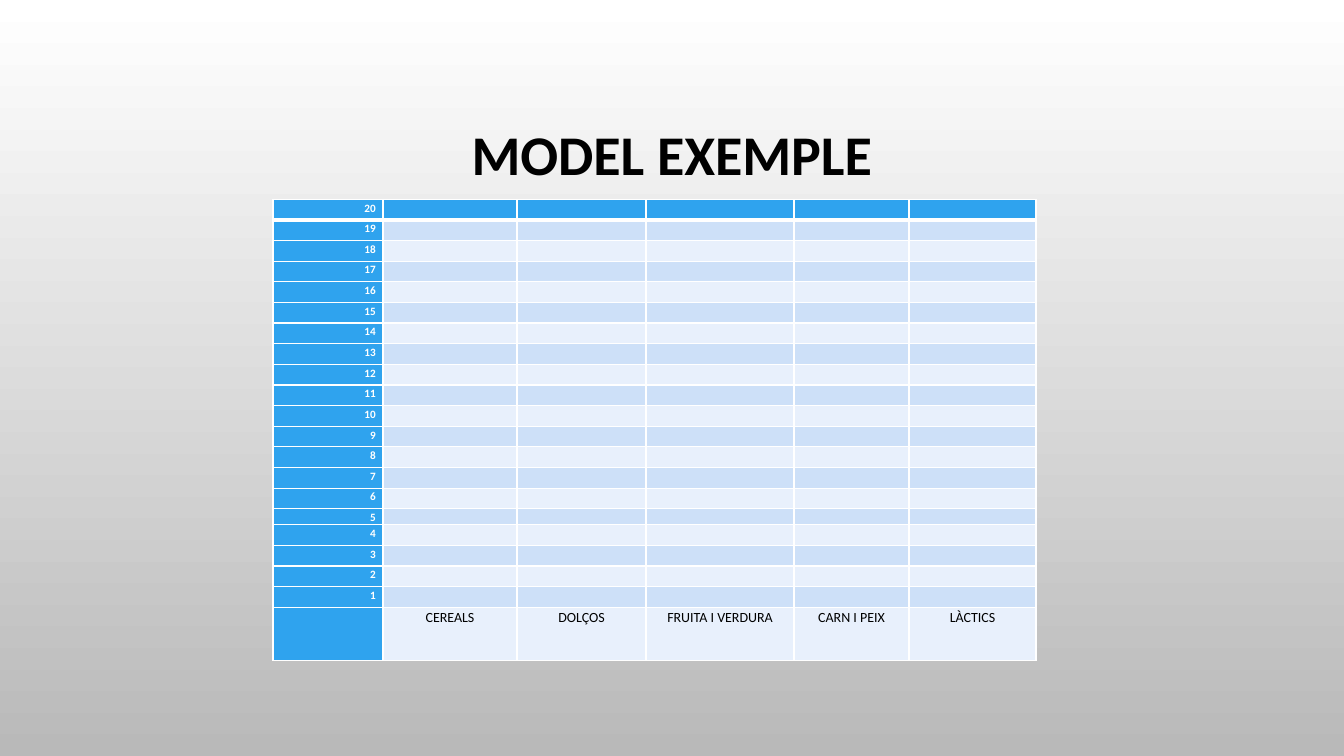
from lxml import etree
from pptx import Presentation
from pptx import util as u
from pptx.dml.color import RGBColor
from pptx.enum import text
from pptx.oxml.ns import qn

# Content
TITLE = "MODEL EXEMPLE"
FOODS = ["CEREALS", "DOLÇOS", "FRUITA I VERDURA", "CARN I PEIX", "LÀCTICS"]
TOP_COUNT = 20
rows = [[str(n)] + [""] * len(FOODS) for n in range(TOP_COUNT, 0, -1)]
rows.append([""] + FOODS)

# Measures in centimetres, and colours
COL_WIDTHS = [2.77, 3.38, 3.25, 3.73, 2.9, 3.2]
ROW_HEIGHT, LOW_ROW_HEIGHT, FOOD_ROW_HEIGHT = 0.52, 0.39, 1.35
BLUE, BAND_DARK, BAND_LIGHT = "2FA3EE", "CDE0F8", "E8F0FC"
WHITE, BLACK, GREY = "FFFFFF", "000000", "B9B9B9"


def rgb(value):
    return RGBColor.from_string(value)


def add_run(p, words, size, color, bold):
    r = p.add_run()
    r.text = words
    r.font.name, r.font.size, r.font.bold = "Calibri", u.Pt(size), bold
    r.font.color.rgb = rgb(color)


def add_borders(cell, top, bottom):
    tc_pr = cell._tc.get_or_add_tcPr()
    for side, width in (("L", 1), ("R", 1), ("T", top), ("B", bottom)):
        ln = etree.SubElement(tc_pr, qn("a:ln" + side), w=str(u.Pt(width)))
        fill = etree.SubElement(ln, qn("a:solidFill"))
        etree.SubElement(fill, qn("a:srgbClr"), val=WHITE)


def row_height(i):
    if i == len(rows) - 1:
        return FOOD_ROW_HEIGHT
    return LOW_ROW_HEIGHT if rows[i][0] == "5" else ROW_HEIGHT


def cell_color(i, j):
    if i == 0 or j == 0:
        return BLUE
    return BAND_DARK if i % 2 else BAND_LIGHT


prs = Presentation()
prs.slide_width, prs.slide_height = u.Cm(33.87), u.Cm(19.05)
s = prs.slides.add_slide(prs.slide_layouts[5])

# Background
bg = s.background.fill
bg.gradient()
bg.gradient_angle = 270
for stop, color in zip(bg.gradient_stops, (WHITE, GREY)):
    stop.color.rgb = rgb(color)
for stop, position in zip(bg.gradient_stops, (0, 1)):
    stop.position = position

# Title
title = s.shapes.title
title.left, title.top = u.Cm(2.54), u.Cm(1.73)
title.width, title.height = u.Cm(28.78), u.Cm(4.45)
tf = title.text_frame
tf.vertical_anchor = text.MSO_ANCHOR.MIDDLE
p = tf.paragraphs[0]
p.alignment, p.line_spacing = text.PP_ALIGN.CENTER, 0.9
add_run(p, TITLE, 40, BLACK, True)

# Table
heights = [row_height(i) for i in range(len(rows))]
table = s.shapes.add_table(
    len(rows), len(COL_WIDTHS), u.Cm(6.88), u.Cm(5.02),
    u.Cm(sum(COL_WIDTHS)), u.Cm(sum(heights))).table
for col, width in zip(table.columns, COL_WIDTHS):
    col.width = u.Cm(width)
for row, height in zip(table.rows, heights):
    row.height = u.Cm(height)

for i, row in enumerate(rows):
    for j, words in enumerate(row):
        cell = table.cell(i, j)
        add_borders(cell, 3 if i == 1 else 1, 3 if i == 0 else 1)
        cell.fill.solid()
        cell.fill.fore_color.rgb = rgb(cell_color(i, j))
        cell.margin_left = cell.margin_right = u.Cm(0.18)
        cell.margin_top = cell.margin_bottom = 0
        p = cell.text_frame.paragraphs[0]
        p.line_spacing = 1.15
        if not words:  # keeps empty cells as low as the numbered ones
            etree.SubElement(p._p, qn("a:endParaRPr"), sz="800")
        elif j == 0:
            p.alignment = text.PP_ALIGN.RIGHT
            add_run(p, words, 8, WHITE, True)
        else:
            p.alignment = text.PP_ALIGN.CENTER
            add_run(p, words, 10, BLACK, False)

prs.save("out.pptx")
